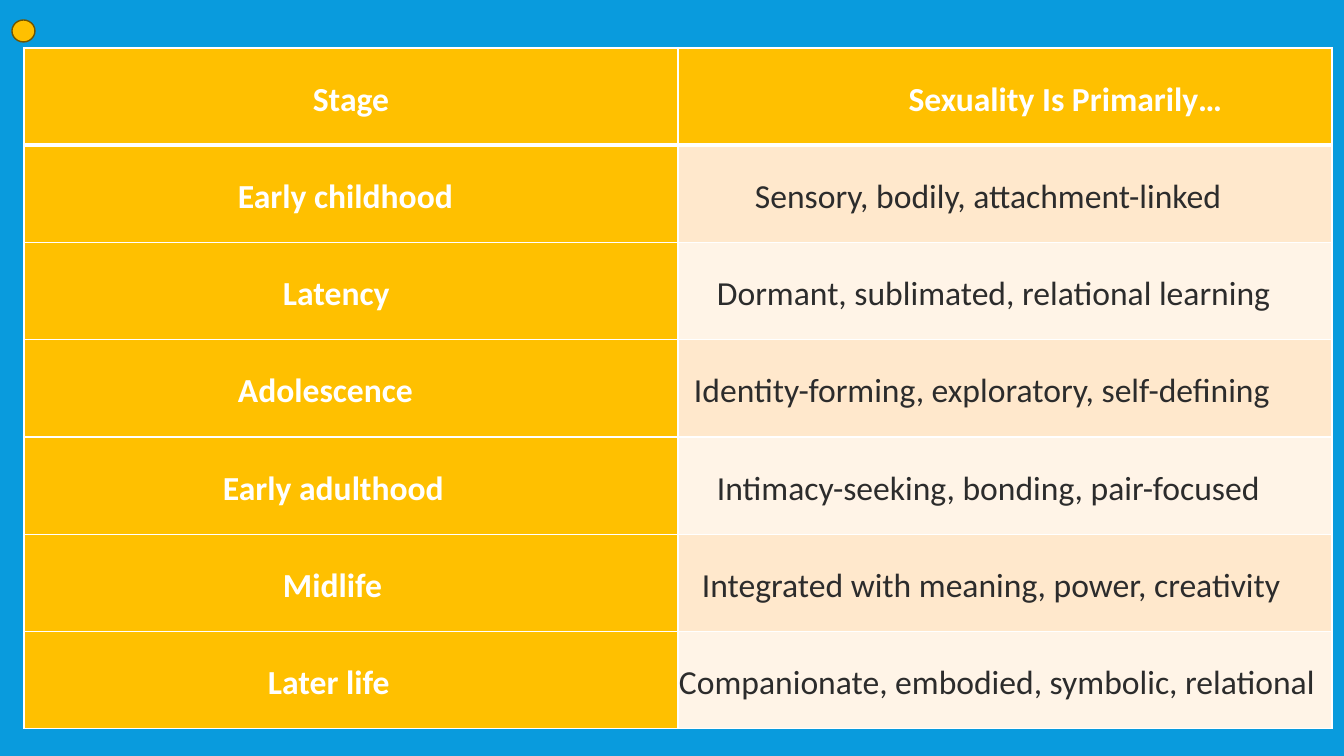
"""Build a slide with a table of life stages and what sexuality is in each."""
from lxml.etree import SubElement as Sub
from pptx import Presentation
from pptx.dml.color import RGBColor as RGB
from pptx.enum.shapes import MSO_SHAPE as SHAPE
from pptx.enum.text import MSO_ANCHOR as ANCHOR, PP_ALIGN as ALIGN
from pptx.oxml.ns import qn
from pptx.util import Pt

BLUE = RGB(0x09, 0x9B, 0xDD)
GOLD = RGB(0xFF, 0xC0, 0x00)
BROWN = RGB(0x70, 0x54, 0x00)
PEACH = RGB(0xFF, 0xE8, 0xCC)
CREAM = RGB(0xFF, 0xF4, 0xE7)
WHITE = RGB(0xFF, 0xFF, 0xFF)
DARK = RGB(0x2C, 0x2C, 0x2C)
SCALE = 12192000 / 1344


def px(count):
    return round(count * SCALE)


def write(cell, text, fill=GOLD, color=WHITE, bold=True, indent=0, align=ALIGN.LEFT, base=1):
    cell.margin_left = px(1 + indent)
    cell.margin_right = cell.margin_top = cell.margin_bottom = px(1)
    cell.vertical_anchor = ANCHOR.MIDDLE
    para = cell.text_frame.paragraphs[0]
    para.alignment = align
    para.line_spacing = 1.15
    para.space_after = Pt(8)
    run = para.add_run()
    run.text = text
    run.font.name = "Calibri"
    run.font.size = Pt(24)
    run.font.bold = bold
    run.font.color.rgb = color
    props = cell._tc.get_or_add_tcPr()
    for side, width in (("L", 1), ("R", 1), ("T", 1), ("B", base)):
        line = Sub(props, qn(f"a:ln{side}"), w=str(Pt(width)))
        Sub(Sub(line, qn("a:solidFill")), qn("a:srgbClr"), val=str(WHITE))
    cell.fill.solid()
    cell.fill.fore_color.rgb = fill


deck = Presentation()
deck.slide_width, deck.slide_height = px(1344), px(756)
slide = deck.slides.add_slide(deck.slide_layouts[6])
slide.background.fill.solid()
slide.background.fill.fore_color.rgb = BLUE

STAGES = [
    ("Early childhood", 213, "Sensory, bodily, attachment-linked", 76),
    ("Latency", 258, "Dormant, sublimated, relational learning", 38),
    ("Adolescence", 213, "Identity-forming, exploratory, self-defining", 15),
    ("Early adulthood", 198, "Intimacy-seeking, bonding, pair-focused", 38),
    ("Midlife", 258, "Integrated with meaning, power, creativity", 23),
    ("Later life", 243, "Companionate, embodied, symbolic, relational", 0),
]
table = slide.shapes.add_table(
    len(STAGES) + 1, 2, px(24), px(48), px(1308), px(681)).table
table.first_row = table.horz_banding = False

write(table.cell(0, 0), "Stage", align=ALIGN.CENTER, base=3)
write(table.cell(0, 1), "Sexuality Is Primarily…", indent=121, align=ALIGN.CENTER, base=3)
for row, (stage, left, focus, inset) in enumerate(STAGES, 1):
    write(table.cell(row, 0), stage, indent=left)
    write(table.cell(row, 1), focus, fill=PEACH if row % 2 else CREAM,
          color=DARK, bold=False, indent=inset)

dot = slide.shapes.add_shape(SHAPE.OVAL, px(12), px(20), px(23), px(22))
dot.shadow.inherit = False
dot.fill.solid()
dot.fill.fore_color.rgb = GOLD
dot.line.color.rgb = BROWN
dot.line.width = Pt(1)

deck.save("out.pptx")
